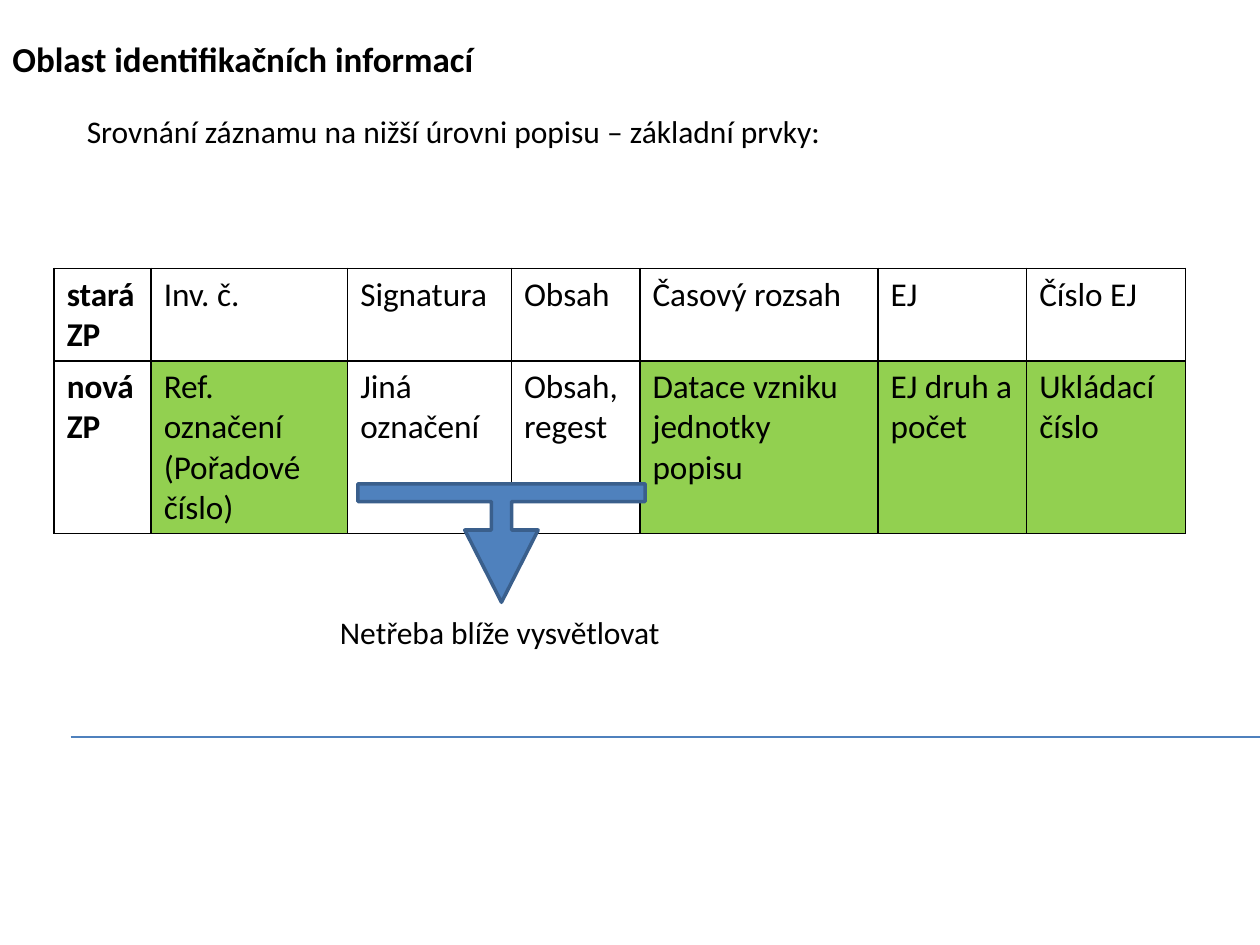
import pptx
import pptx.dml.color
import pptx.enum.shapes
import pptx.enum.text
import pptx.oxml.ns
import pptx.util
import lxml.etree

Inches = pptx.util.Inches
Pt = pptx.util.Pt

COLOURS = {
    "text": "000000",
    "changed": "92D050",
    "accent": "4F81BD",
    "accent_edge": "3A5F8C",
}
COLUMN_WIDTHS = [0.77, 1.56, 1.3, 1.02, 1.89, 1.18, 1.26]
ROW_HEIGHTS = [0.73, 1.37]
RECORDS = [
    ["stará ZP", "Inv. č.", "Signatura", "Obsah", "Časový rozsah", "EJ", "Číslo EJ"],
    ["nová ZP", "Ref. označení (Pořadové číslo)", "Jiná označení", "Obsah, regest",
     "Datace vzniku jednotky popisu", "EJ druh a počet", "Ukládací číslo"],
]
CHANGED_CELLS = {(1, 1), (1, 4), (1, 5), (1, 6)}


def rgb(name):
    return pptx.dml.color.RGBColor.from_string(COLOURS[name])


class SlideBuilder:
    def __init__(self, slide, font="Calibri"):
        self.slide = slide
        self.font = font

    def set_text(self, frame, text, size, bold=False):
        frame.text = text
        for run in frame.paragraphs[0].runs:
            run.font.name = self.font
            run.font.size = Pt(size)
            run.font.bold = bold
            run.font.color.rgb = rgb("text")

    def text(self, text, left, top, width, height, size=18, bold=False, anchor="TOP"):
        box = self.slide.shapes.add_textbox(
            Inches(left), Inches(top), Inches(width), Inches(height))
        frame = box.text_frame
        frame.word_wrap = True
        frame.vertical_anchor = pptx.enum.text.MSO_ANCHOR[anchor]
        self.set_text(frame, text, size, bold)

    def rule(self, start, end, y):
        line = self.slide.shapes.add_connector(
            pptx.enum.shapes.MSO_CONNECTOR.STRAIGHT,
            Inches(start), Inches(y), Inches(end), Inches(y))
        line.line.color.rgb = rgb("accent")
        line.line.width = Pt(0.75)
        lxml.etree.SubElement(line._element.spPr, pptx.oxml.ns.qn("a:effectLst"))

    def border(self, cell):
        """Draw all four cell edges; call before the fill, which must follow them."""
        properties = cell._tc.get_or_add_tcPr()
        for side in ("lnL", "lnR", "lnT", "lnB"):
            edge = lxml.etree.SubElement(
                properties, pptx.oxml.ns.qn(f"a:{side}"), w=str(Pt(1)))
            solid = lxml.etree.SubElement(edge, pptx.oxml.ns.qn("a:solidFill"))
            lxml.etree.SubElement(
                solid, pptx.oxml.ns.qn("a:srgbClr"), val=COLOURS["text"])

    def table(self, records, left, top, widths, heights, changed):
        table = self.slide.shapes.add_table(
            len(records), len(widths), Inches(left), Inches(top),
            Inches(sum(widths)), Inches(sum(heights))).table
        table.first_row = table.horz_banding = False
        for column, width in zip(table.columns, widths):
            column.width = Inches(width)
        for r, record in enumerate(records):
            table.rows[r].height = Inches(heights[r])
            for c, text in enumerate(record):
                cell = table.cell(r, c)
                self.set_text(cell.text_frame, text, 19, bold=c == 0)
                self.border(cell)
                if (r, c) in changed:
                    cell.fill.solid()
                    cell.fill.fore_color.rgb = rgb("changed")
                else:
                    cell.fill.background()

    def callout_arrow(self, left, top, width, height, adjustments):
        arrow = self.slide.shapes.add_shape(
            pptx.enum.shapes.MSO_SHAPE.DOWN_ARROW_CALLOUT,
            Inches(left), Inches(top), Inches(width), Inches(height))
        for i, value in enumerate(adjustments):
            arrow.adjustments[i] = value
        arrow.shadow.inherit = False
        arrow.fill.solid()
        arrow.fill.fore_color.rgb = rgb("accent")
        arrow.line.color.rgb = rgb("accent_edge")
        arrow.line.width = Pt(2)


def main():
    presentation = pptx.Presentation()
    presentation.slide_width = Inches(10)
    presentation.slide_height = Inches(7.5)
    slide = presentation.slides.add_slide(presentation.slide_layouts[6])
    builder = SlideBuilder(slide)

    builder.rule(0.56, 10, 5.85)
    builder.text("Oblast identifikačních informací", 0, 0.24, 10, 0.44,
                 size=20, bold=True, anchor="BOTTOM")
    builder.table(RECORDS, 0.43, 2.13, COLUMN_WIDTHS, ROW_HEIGHTS, CHANGED_CELLS)
    builder.text("Srovnání záznamu na nižší úrovni popisu – základní prvky:",
                 0.59, 0.84, 8.82, 0.4)
    builder.callout_arrow(2.84, 3.84, 2.28, 0.94, [0.17, 0.31, 0.61, 0.15])
    builder.text("Netřeba blíže vysvětlovat", 2.6, 4.82, 2.76, 0.4)

    presentation.save("out.pptx")


if __name__ == "__main__":
    main()
